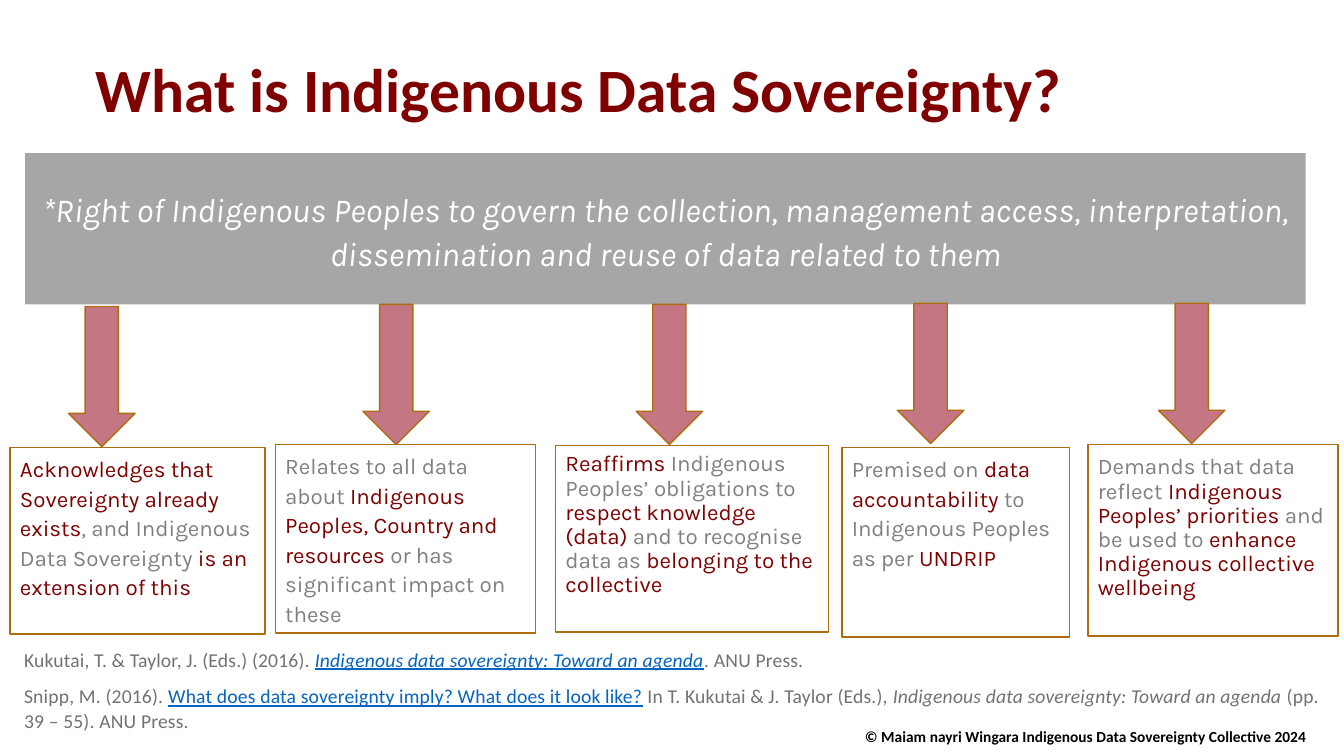
from dataclasses import dataclass

from pptx import Presentation
from pptx.dml.color import RGBColor
from pptx.enum.shapes import MSO_SHAPE as Shape
from pptx.enum.text import MSO_ANCHOR as Anchor, PP_ALIGN as Align
from pptx.util import Emu, Pt

PX = 9144  # 100 px to the inch
COLORS = {
    "red": "800000", "band": "A6A6A6", "white": "FFFFFF", "rose": "C47683",
    "gold": "AF6C0F", "gray": "808080", "cite": "767171", "link": "0563C1",
    "black": "000000",
}


@dataclass
class Card:
    left: int
    top: int
    width: int
    height: int
    arrow: tuple[int, int]  # left, top
    space: float
    pad: int
    text: str  # stars enclose the red words


@dataclass
class Part:
    text: str
    color: str = "cite"
    italic: bool = False
    under: bool = False


CARDS = [
    Card(10, 444, 253, 185, (68, 304), 1.1, 5,
         "*Acknowledges that Sovereignty already exists*, and Indigenous "
         "Data Sovereignty *is an extension of this*"),
    Card(273, 441, 258, 187, (360, 302), 1.1, 5,
         "Relates to all data about *Indigenous Peoples, Country and "
         "resources *or has significant impact on these"),
    Card(551, 442, 271, 185, (631, 302), 0.9, 7,
         "*Reaffirms *Indigenous Peoples’ obligations to *respect knowledge "
         "(data) *and to recognise data as *belonging to the collective*"),
    Card(835, 444, 226, 188, (890, 301), 1.1, 5,
         "Premised on *data accountability *to Indigenous Peoples as per "
         "*UNDRIP*"),
    Card(1079, 441, 248, 190, (1149, 301), 0.9, 11,
         "Demands that data reflect *Indigenous Peoples’ priorities *and be "
         "used to *enhance Indigenous collective wellbeing*"),
]
AGENDA = "Indigenous data sovereignty: Toward an agenda"
CITES = [
    [Part("Kukutai, T. & Taylor, J. (Eds.) (2016). "),
     Part(AGENDA, "link", True, True),
     Part(". ANU Press.")],
    [Part("Snipp, M. (2016). "),
     Part("What does data sovereignty imply? What does it look like?",
          "link", under=True),
     Part(" In T. Kukutai & J. Taylor (Eds.), "),
     Part(AGENDA, italic=True),
     Part(" (pp. 39 – 55). ANU Press.")],
]


def rgb(name: str) -> RGBColor:
    return RGBColor.from_string(COLORS[name])


def px(*sizes: int) -> list[Emu]:
    return [Emu(size * PX) for size in sizes]


def style(para, font: str, size: int, color: str, space: float = 1.0) -> None:
    para.font.name, para.font.size = font, Pt(size)
    para.font.color.rgb = rgb(color)
    para.line_spacing = space


def add_shape(slide, kind, box: tuple, fill: str, line: str = ""):
    shape = slide.shapes.add_shape(kind, *px(*box))
    shape.shadow.inherit = False
    shape.fill.solid()
    shape.fill.fore_color.rgb = rgb(fill)
    if line:
        shape.line.color.rgb = rgb(line)
        shape.line.width = Pt(1)
    else:
        shape.line.fill.background()
    return shape


def add_text(slide, box: tuple, wrap: bool = True):
    frame = slide.shapes.add_textbox(*px(*box)).text_frame
    frame.word_wrap = wrap
    return frame


def add_card(slide, card: Card) -> None:
    add_shape(slide, Shape.DOWN_ARROW, (*card.arrow, 66, 139), "rose", "gold")
    box = (card.left, card.top, card.width, card.height)
    frame = add_shape(slide, Shape.RECTANGLE, box, "white", "gold").text_frame
    frame.vertical_anchor = Anchor.TOP
    frame.margin_top = Emu(card.pad * PX)
    para = frame.paragraphs[0]
    para.alignment = Align.LEFT
    style(para, "Karla", 16, "gray", card.space)
    for spot, words in enumerate(card.text.split("*")):
        if words:
            run = para.add_run()
            run.text = words
            run.font.color.rgb = rgb("red" if spot % 2 else "gray")


def add_cites(slide) -> None:
    frame = add_text(slide, (14, 636, 1306, 139))
    for spot, parts in enumerate(CITES):
        para = frame.add_paragraph() if spot else frame.paragraphs[0]
        style(para, "Calibri", 14, "cite", 1.07)
        para.space_after = Pt(8)
        for part in parts:
            run = para.add_run()
            run.text = part.text
            run.font.color.rgb = rgb(part.color)
            run.font.italic, run.font.underline = part.italic, part.under
            run._r.get_or_add_rPr().set("spc", "10")


def main() -> None:
    deck = Presentation()
    deck.slide_width, deck.slide_height = px(1333, 750)
    slide = deck.slides.add_slide(deck.slide_layouts[6])

    # Title
    frame = add_text(slide, (85, 19, 1150, 145))
    frame.vertical_anchor = Anchor.MIDDLE
    para = frame.paragraphs[0]
    para.text = "What is Indigenous Data Sovereignty?"
    style(para, "Calibri", 44, "red", 0.9)
    para.font.bold = True

    # Definition band
    band = add_shape(slide, Shape.RECTANGLE, (25, 152, 1270, 150), "band")
    band.text_frame.word_wrap = True
    para = band.text_frame.paragraphs[0]
    para.text = ("*Right of Indigenous Peoples to govern the collection, "
                 "management access, interpretation, dissemination and reuse "
                 "of data related to them")
    para.alignment = Align.CENTER
    style(para, "Karla", 24, "white", 1.1)
    para.font.italic = True

    # Arrows and cards
    for card in CARDS:
        add_card(slide, card)

    # References and copyright
    add_cites(slide)
    para = add_text(slide, (848, 716, 667, 29)).paragraphs[0]
    para.text = ("© Maiam nayri Wingara Indigenous Data Sovereignty "
                 "Collective 2024")
    style(para, "Calibri", 11, "black")
    para.font.bold = True

    deck.save("out.pptx")


if __name__ == "__main__":
    main()
